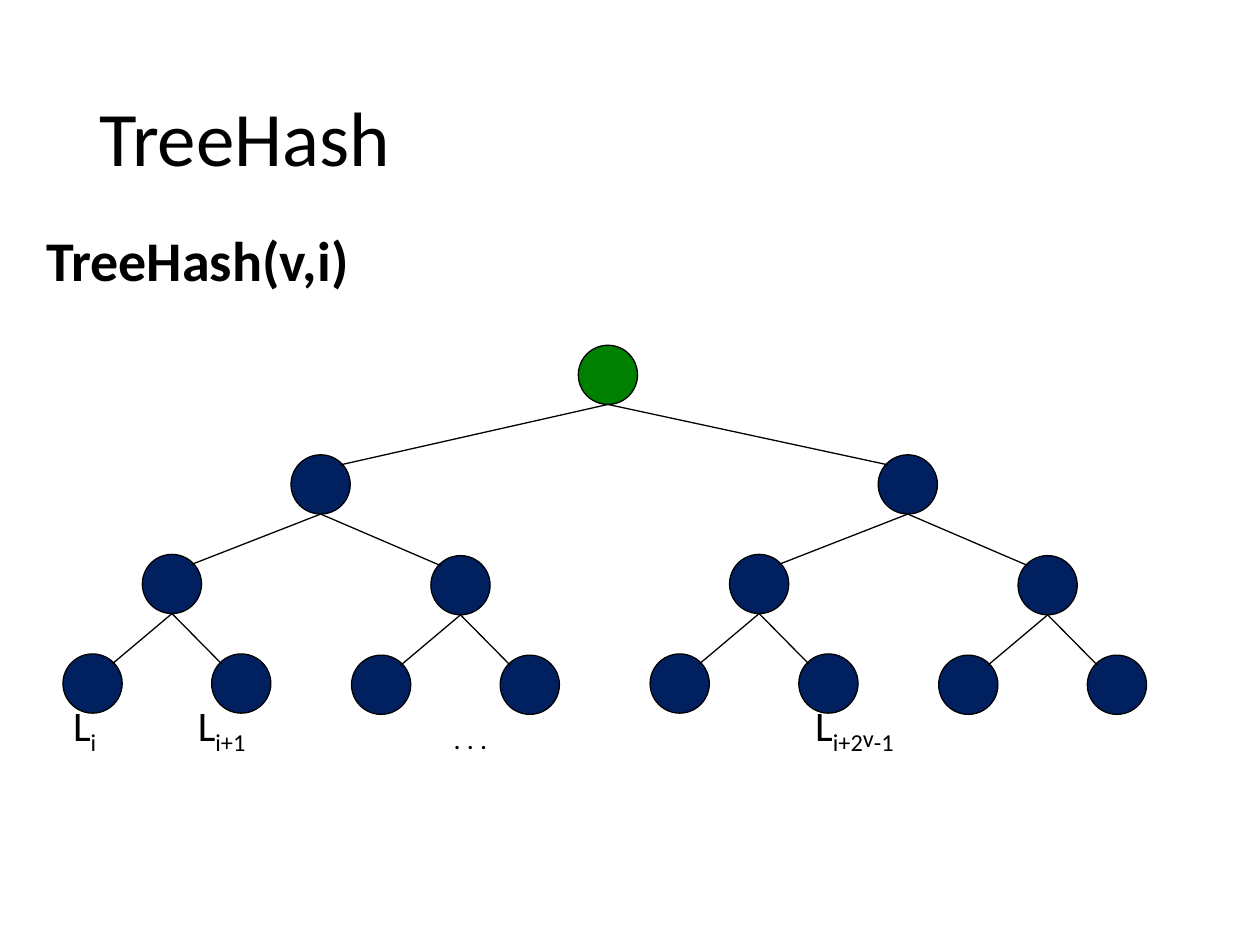
"""Build a slide that shows the TreeHash binary tree."""
import pptx
import pptx.dml.color
import pptx.enum.shapes
import pptx.enum.text
import pptx.oxml
import pptx.util

Inches = pptx.util.Inches
COLORS = {"text": "000000", "line": "000000", "node": "002060", "root": "008000"}
FONT = "Calibri"
NODE_SIZE = 0.47
EDGE_INSET = 0.08
HALF_STEP = 4.66
GROUP_STEP = 2.29
GROUP_DROP = 0.01
LEAF_STEP = 1.18


def rgb(name):
    """Return the named colour."""
    return pptx.dml.color.RGBColor.from_string(COLORS[name])


def add_text(page, left, top, width, height, spans, inset=0.0, bold=False, middle=False):
    """Add one line of text made of (text, size, baseline) spans."""
    box = page.shapes.add_textbox(Inches(left), Inches(top), Inches(width), Inches(height))
    frame = box.text_frame
    frame.word_wrap = True
    frame.margin_left = frame.margin_right = Inches(inset)
    frame.margin_top = frame.margin_bottom = Inches(inset / 2)
    anchor = pptx.enum.text.MSO_ANCHOR
    frame.vertical_anchor = anchor.MIDDLE if middle else anchor.TOP
    para = frame.paragraphs[0]
    if middle:
        para.line_spacing = 0.9
    for text, size, baseline in spans:
        span = para.add_run()
        span.text = text
        span.font.name = FONT
        span.font.size = pptx.util.Pt(size)
        span.font.bold = bold
        span.font.color.rgb = rgb("text")
        if baseline:
            span.font._element.set("baseline", str(baseline * 1000))


def add_node(page, left, top, color="node"):
    """Add a tree node and return its left and top."""
    node = page.shapes.add_shape(
        pptx.enum.shapes.MSO_SHAPE.OVAL,
        Inches(left), Inches(top), Inches(NODE_SIZE), Inches(NODE_SIZE))
    node.shadow.inherit = False
    node.fill.solid()
    node.fill.fore_color.rgb = rgb(color)
    node.line.color.rgb = rgb("line")
    node.line.width = pptx.util.Pt(0.75)
    return left, top


def add_edges(page, parent, children):
    """Join the bottom of a parent to the facing upper corners of its two children."""
    left, top = parent
    insets = (NODE_SIZE - EDGE_INSET, EDGE_INSET)
    for (child_left, child_top), inset in zip(children, insets):
        edge = page.shapes.add_connector(
            pptx.enum.shapes.MSO_CONNECTOR.STRAIGHT,
            Inches(left + NODE_SIZE / 2), Inches(top + NODE_SIZE),
            Inches(child_left + inset), Inches(child_top + EDGE_INSET))
        edge.line.color.rgb = rgb("line")
        edge.line.width = pptx.util.Pt(0.75)
        properties = edge._element.spPr
        properties.append(properties.makeelement(pptx.oxml.ns.qn("a:effectLst"), {}))


def add_group(page, left, drop):
    """Add a parent with two leaves and return the parent."""
    leaves = [add_node(page, left + step, 5.19 + drop) for step in (0, LEAF_STEP)]
    parent = add_node(page, left + 0.63, 4.4 + drop)
    add_edges(page, parent, leaves)
    return parent


def add_half(page, left):
    """Add one half of the tree and return its top node."""
    groups = [add_group(page, left + i * GROUP_STEP, i * GROUP_DROP) for i in range(2)]
    top_node = add_node(page, left + 1.81, 3.61)
    add_edges(page, top_node, groups)
    return top_node


def add_leaf_label(page, left, subscripts):
    """Add a leaf label: L followed by lowered spans."""
    spans = [("L", 24, 0)] + [(text, 24, baseline) for text, baseline in subscripts]
    add_text(page, left, 5.55, 1, 0.45, spans)


def main():
    """Build and save the deck."""
    deck = pptx.Presentation()
    deck.slide_width, deck.slide_height = Inches(10), Inches(7.5)
    page = deck.slides.add_slide(deck.slide_layouts[6])
    add_text(page, 0.69, 0.4, 8.62, 1.45, [("TreeHash", 44, 0)], inset=0.1, middle=True)
    add_leaf_label(page, 0.58, [("i", -25)])
    add_leaf_label(page, 1.57, [("i+1", -25)])
    add_text(page, 3.6, 5.73, 0.6, 0.3, [(". . .", 16, 0)])
    add_leaf_label(page, 6.47, [("i+2", -25), ("v", -14), ("-1", -25)])
    halves = [add_half(page, 0.5 + i * HALF_STEP) for i in range(2)]
    root = add_node(page, 4.59, 2.74, "root")
    add_edges(page, root, halves)
    add_text(page, 0.27, 1.74, 3.71, 0.64, [("TreeHash(v,i)", 32, 0)], inset=0.1, bold=True)
    deck.save("out.pptx")


if __name__ == "__main__":
    main()
